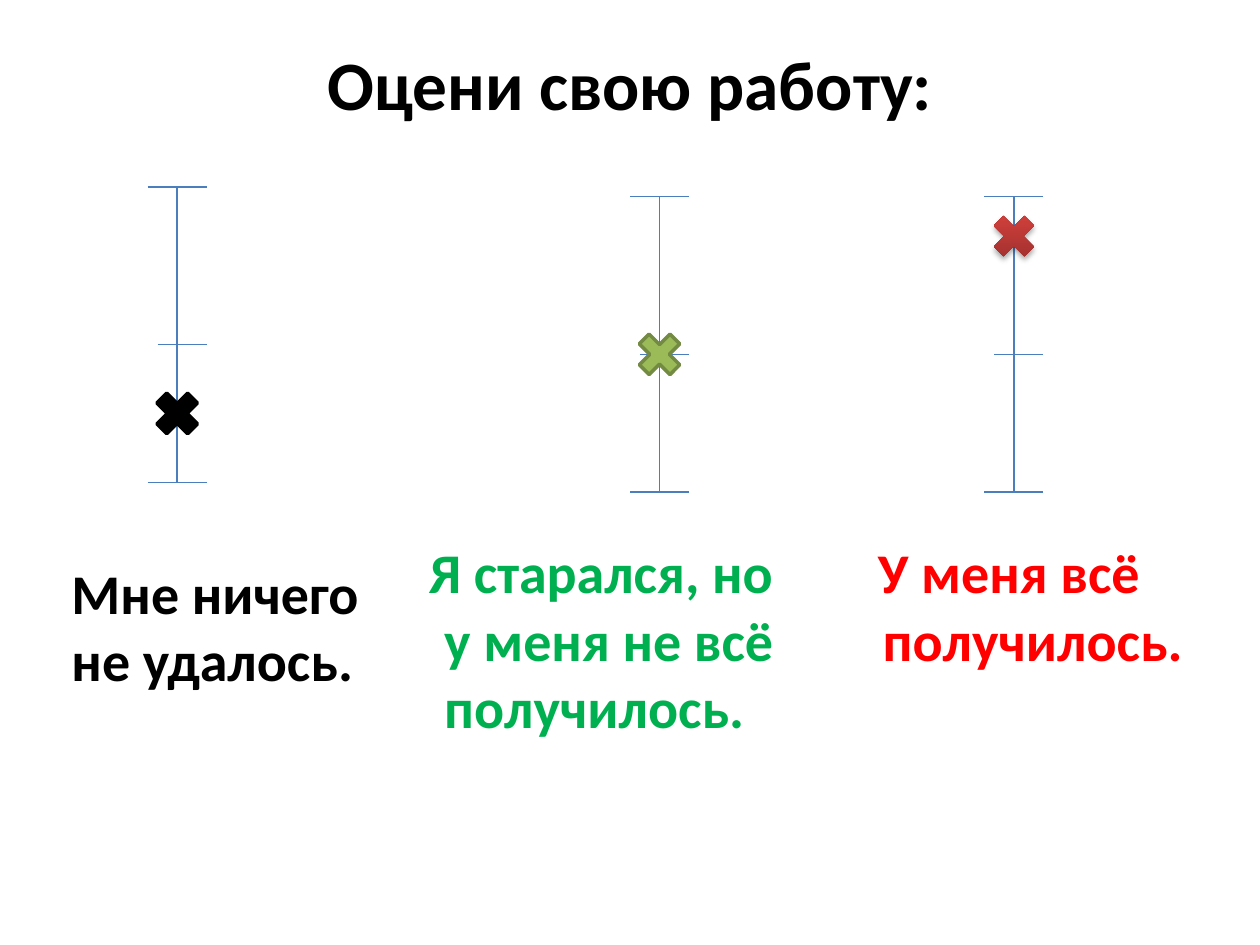
from copy import deepcopy
from lxml import etree
from pptx import Presentation
from pptx.dml.color import RGBColor
from pptx.enum.shapes import MSO_CONNECTOR as CONN, MSO_SHAPE as SHAPE
from pptx.enum.text import MSO_ANCHOR as ANCHOR, PP_ALIGN as ALIGN
from pptx.oxml import parse_xml
from pptx.oxml.ns import qn
from pptx.util import Inches, Pt


def rgb(value):
    return RGBColor.from_string(value)


def style(p, text, size, color, align):
    p.text = text
    p.alignment = align
    p.font.name = "Calibri"
    p.font.size = Pt(size)
    p.font.bold = True
    p.font.color.rgb = rgb(color)


prs = Presentation()
prs.slide_width, prs.slide_height = Inches(10), Inches(7.5)
U = prs.slide_width / 128
s = prs.slides.add_slide(prs.slide_layouts[5])

title = s.shapes.title
title.left, title.top = Inches(0.5), Inches(0.3)
title.width, title.height = Inches(9), Inches(0.72)
title.text_frame.vertical_anchor = ANCHOR.MIDDLE
style(title.text_frame.paragraphs[0], "Оцени свою работу:", 39.6, "000000", ALIGN.CENTER)

captions = [
    (39, 43, 21, "Я старался, но у меня не всё получилось.", "00B050", ALIGN.LEFT, ANCHOR.TOP, 0.38, -0.12),
    (6, 35, 17, "Мне ничего не удалось.", "000000", ALIGN.LEFT, ANCHOR.BOTTOM, 0, 0),
    (83, 39, 21, "У меня всё получилось.", "FF0000", ALIGN.CENTER, ANCHOR.TOP, 0.38, -0.38),
]
for col, cols, rows, text, color, align, anchor, margin, indent in captions:
    tf = s.shapes.add_textbox(*(int(n * U) for n in (col, 54, cols, rows))).text_frame
    tf.word_wrap = True
    tf.vertical_anchor = anchor
    p = tf.paragraphs[0]
    style(p, text, 32, color, align)
    p.space_before = Pt(6.4)
    pPr = p._p.get_or_add_pPr()
    pPr.set("marL", str(Inches(margin)))
    pPr.set("indent", str(Inches(indent)))

scales = [(18, 19, 20, "000000", "000000"), (67, 20, 13, "9BBB59", "738A42"), (103, 20, 1, None, None)]
for x, top, mark, fill, outline in scales:
    for x1, y1, x2, y2 in [(0, 0, 0, 30), (-3, 0, 3, 0), (-3, 30, 3, 30), (-2, 16, 3, 16)]:
        ends = (x + x1, top + y1, x + x2, top + y2)
        line = s.shapes.add_connector(CONN.STRAIGHT, *(int(n * U) for n in ends))
        line.line.color.rgb = rgb("4B7EBC")
        line.line.width = Pt(0.75)
        etree.SubElement(line._element.spPr, qn("a:effectLst"))

    cross = s.shapes.add_shape(SHAPE.MATH_MULTIPLY, *(int(n * U) for n in (x - 3, top + mark, 6, 6)))
    cross.shadow.inherit = False
    if fill:
        cross.fill.solid()
        cross.fill.fore_color.rgb = rgb(fill)
        cross.line.color.rgb = rgb(outline)
        cross.line.width = Pt(2)
    else:
        cross.line.fill.background()
        cross.fill.gradient()
        cross.fill.gradient_angle = 90
        stops = cross._element.spPr.find(".//" + qn("a:gsLst"))
        stops.append(deepcopy(stops[-1]))
        reds = [(0, "9C2F2D"), (0.8, "CB3E3A"), (1, "CE3B37")]
        for stop, (position, color) in zip(cross.fill.gradient_stops, reds):
            stop.position = position
            stop.color.rgb = rgb(color)
        cross._element.spPr.find(qn("a:effectLst")).append(parse_xml(
            '<a:outerShdw xmlns:a="http://schemas.openxmlformats.org/drawingml/2006/main" '
            'blurRad="40000" dist="23000" dir="5400000" rotWithShape="0">'
            '<a:srgbClr val="000000"><a:alpha val="35000"/></a:srgbClr></a:outerShdw>'))

prs.save("out.pptx")
